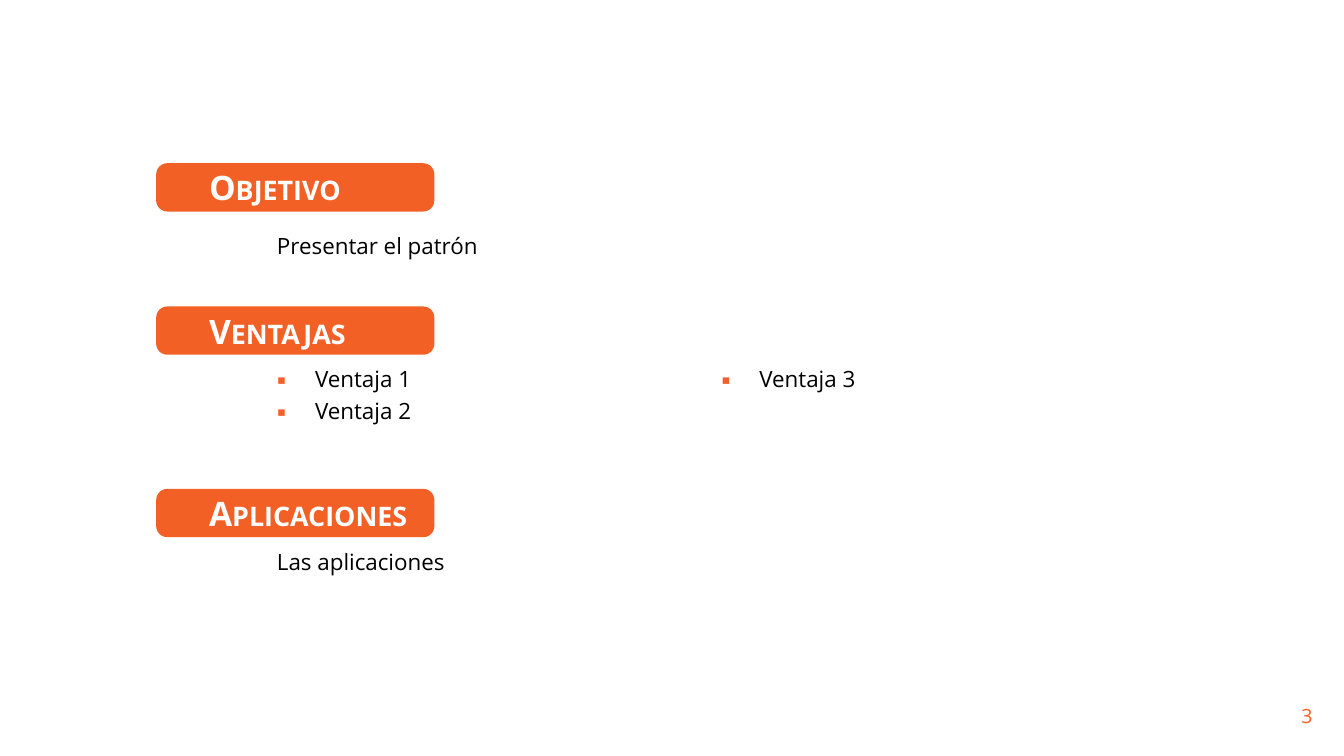
from dataclasses import dataclass

from lxml.etree import SubElement
from pptx import Presentation
from pptx.dml.color import RGBColor as Color
from pptx.enum.shapes import MSO_SHAPE as Form
from pptx.enum.text import MSO_ANCHOR as Anchor, MSO_AUTO_SIZE as Fit, PP_ALIGN as Align
from pptx.oxml.ns import qn
from pptx.util import Pt


@dataclass(frozen=True)
class Theme:
    """Colours, font and type sizes of the slide."""
    font: str = "Open Sans"
    accent: str = "F36025"
    folio: str = "F65D25"
    white: str = "FFFFFF"
    black: str = "000000"
    head: int = 24
    body: int = 16
    small: int = 14


THEME = Theme()
LEFT, WIDE = 190.8, 649.2


def add_run(para, text, size, color):
    """Add one formatted run to a paragraph."""
    run = para.add_run()
    run.text = text
    font = run.font
    font.name, font.size = THEME.font, Pt(size)
    font.color.rgb = Color.from_string(color)
    return run


def add_head(slide, top, text):
    """Add a rounded section heading in small caps."""
    bar = slide.shapes.add_shape(Form.ROUNDED_RECTANGLE, Pt(111.6), Pt(top), Pt(198.7), Pt(34.5))
    bar.adjustments[0] = 0.23
    bar.shadow.inherit = False
    bar.fill.solid()
    bar.fill.fore_color.rgb = Color.from_string(THEME.accent)
    bar.line.fill.background()
    frame = bar.text_frame
    frame.vertical_anchor = Anchor.MIDDLE
    para = frame.paragraphs[0]
    para.alignment = Align.LEFT
    para._p.get_or_add_pPr().set("indent", str(Pt(28.35)))
    run = add_run(para, text, THEME.head, THEME.white)
    run.font.bold = True
    run._r.get_or_add_rPr().set("cap", "small")


def add_text(slide, top, text):
    """Add a plain line of body text."""
    box = slide.shapes.add_textbox(Pt(LEFT), Pt(top), Pt(WIDE), Pt(26.6))
    frame = box.text_frame
    frame.word_wrap = True
    frame.auto_size = Fit.SHAPE_TO_FIT_TEXT
    para = frame.paragraphs[0]
    para.line_spacing = 0.9
    add_run(para, text, THEME.body, THEME.black)


def add_mark(para):
    """Give a paragraph a hanging square bullet."""
    props = para._p.get_or_add_pPr()
    props.set("marL", str(Pt(27)))
    props.set("indent", str(Pt(-27)))
    tint = SubElement(props, qn("a:buClr"))
    SubElement(tint, qn("a:srgbClr"), val=THEME.accent)
    SubElement(props, qn("a:buFont"), typeface=THEME.font)
    SubElement(props, qn("a:buChar"), char="▪")


def fill_list(body, top, items):
    """Fill the body placeholder with a two-column list."""
    body.left, body.top = Pt(LEFT), Pt(top)
    body.width, body.height = Pt(WIDE), Pt(58.3)
    frame = body.text_frame
    frame.word_wrap = True
    frame.auto_size = Fit.SHAPE_TO_FIT_TEXT
    frame._txBody.bodyPr.set("numCol", "2")
    for num, item in enumerate(items):
        para = frame.add_paragraph() if num else frame.paragraphs[0]
        add_mark(para)
        para.line_spacing = 0.9
        para.space_before, para.space_after = Pt(0), Pt(6)
        add_run(para, item, THEME.body, THEME.black)


def add_folio(slide, text):
    """Add the page number at the lower right."""
    box = slide.shapes.add_textbox(Pt(892.8), Pt(496.8), Pt(51.8), Pt(28.8))
    frame = box.text_frame
    frame.word_wrap = True
    frame.vertical_anchor = Anchor.MIDDLE
    para = frame.paragraphs[0]
    para.alignment = Align.RIGHT
    add_run(para, text, THEME.small, THEME.folio)


def main():
    """Build the slide and save it."""
    deck = Presentation()
    deck.slide_width, deck.slide_height = Pt(960), Pt(540)
    slide = deck.slides.add_slide(deck.slide_layouts[1])
    title, body = slide.placeholders
    title.element.getparent().remove(title.element)
    add_folio(slide, "3")
    for top, text in ((116.6, "Objetivo"), (218.9, "Ventajas"), (349.2, "Aplicaciones")):
        add_head(slide, top, text)
    add_text(slide, 164.2, "Presentar el patrón")
    fill_list(body, 259.2, ("Ventaja 1", "Ventaja 2", "Ventaja 3"))
    add_text(slide, 390.2, "Las aplicaciones")
    deck.save("out.pptx")


if __name__ == "__main__":
    main()
